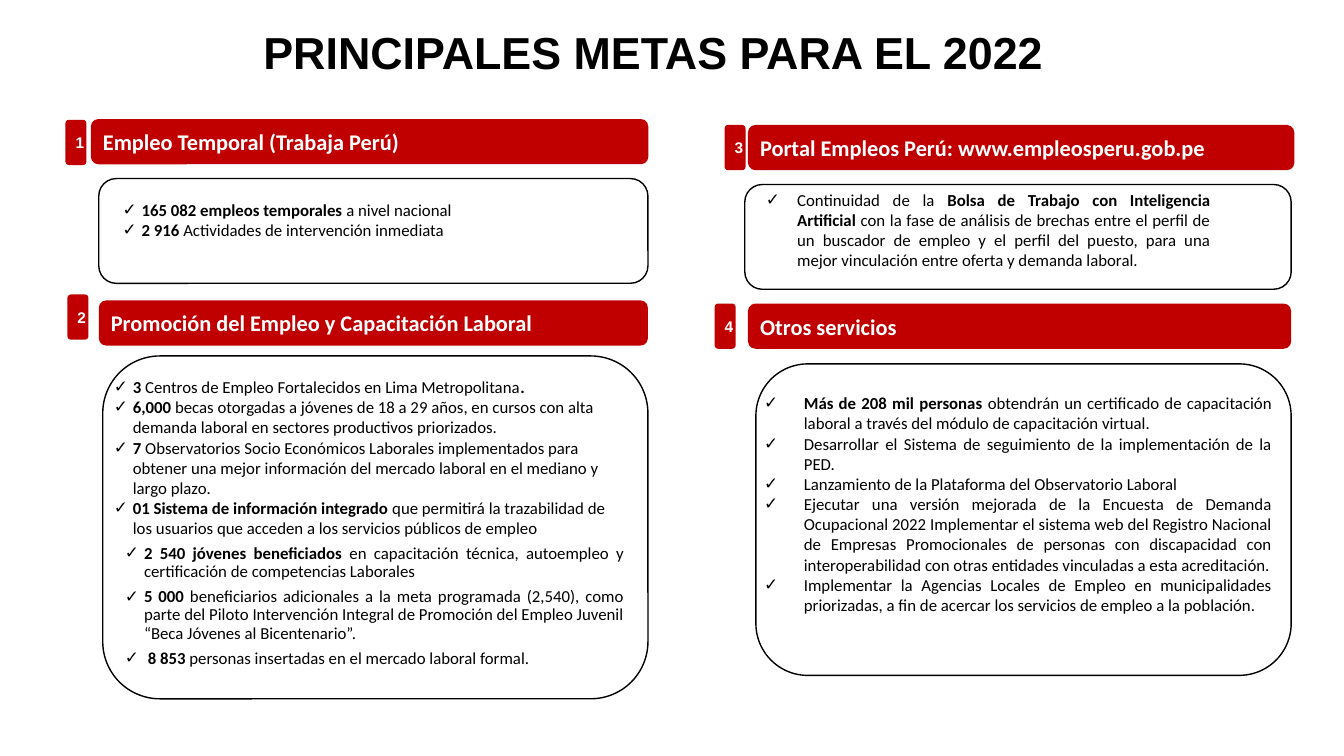
"""Build the slide with the main employment goals for 2022."""
from dataclasses import dataclass

from lxml import etree
from pptx import Presentation
from pptx import util as u
from pptx.dml.color import RGBColor
from pptx.enum import shapes, text
from pptx.oxml.ns import qn

TITLE = "PRINCIPALES METAS PARA EL 2022 "
TITLE_BOX = (0.38, 0.51, 32.49, 1.63)
BADGE = (0.53, 1.14)

# Asterisks enclose the bold words of each item.
GOALS = [
    dict(
        head="Empleo Temporal (Trabaja Perú)",
        badge=(1.65, 3.02), bar=(2.29, 3, 14.05, 1.14),
        panel=(2.49, 4.5, 13.84, 2.64), body=(1.85, 4.9, 14.35, 1.27),
        style="main", just=True,
        items=[
            "*165 082 empleos temporales *a nivel nacional",
            "*2 916 *Actividades de intervención inmediata",
        ],
    ),
    dict(
        head="Promoción del Empleo y Capacitación Laboral",
        badge=(1.7, 7.42), bar=(2.49, 7.57, 13.84, 1.14),
        panel=(2.59, 8.97, 13.74, 8.64), body=(1.63, 9.37, 14.35, 8.18),
        style="main", just=False,
        items=[
            "*3 *Centros de Empleo Fortalecidos en Lima Metropolitana*.*",
            "*6,000 *becas otorgadas a jóvenes de 18 a 29 años, en cursos con alta demanda laboral en sectores productivos priorizados.",
            "*7 *Observatorios Socio Económicos Laborales implementados para obtener una mejor información del mercado laboral en el mediano y largo plazo.",
            "*01 Sistema de información integrado *que permitirá la trazabilidad de los usuarios que acceden a los servicios públicos de empleo",
        ],
        subs=[
            "*2 540 jóvenes beneficiados *en capacitación técnica, autoempleo y certificación de competencias Laborales",
            "*5 000* beneficiarios adicionales a la meta programada (2,540), como parte del Piloto Intervención Integral de Promoción del Empleo Juvenil “Beca Jóvenes al Bicentenario”.",
            "* 8 853 *personas insertadas en el mercado laboral formal.",
        ],
    ),
    dict(
        head="Portal Empleos Perú: www.empleosperu.gob.pe",
        badge=(18.26, 3.15), bar=(18.85, 3.15, 13.77, 1.14),
        panel=(18.77, 4.65, 13.77, 2.64), body=(19.05, 4.65, 11.71, 2.82),
        style="flush", just=True,
        items=[
            "Continuidad de la *Bolsa de Trabajo con Inteligencia Artificial *con la fase de análisis de brechas entre el perfil de un buscador de empleo y el perfil del puesto, para una mejor vinculación entre oferta y demanda laboral.",
        ],
    ),
    dict(
        head="Otros servicios",
        badge=(18.01, 7.65), bar=(18.85, 7.65, 13.69, 1.14),
        panel=(19.05, 9.17, 13.49, 7.85), body=(18.01, 9.78, 14.3, 7.44),
        style="wide", just=True,
        items=[
            "*Más de 208 mil personas *obtendrán un certificado de capacitación laboral a través del módulo de capacitación virtual.",
            "Desarrollar el Sistema de seguimiento de la implementación de la PED.",
            "Lanzamiento de la Plataforma del Observatorio Laboral",
            "Ejecutar una versión mejorada de la Encuesta de Demanda Ocupacional 2022 Implementar el sistema web del Registro Nacional de Empresas Promocionales de personas con discapacidad con interoperabilidad con otras entidades vinculadas a esta acreditación.",
            "Implementar la Agencias Locales de Empleo en municipalidades priorizadas, a fin de acercar los servicios de empleo a la población.",
        ],
    ),
]
INDENTS = {"main": (1.47, 0.48), "sub": (1.75, 0.48), "flush": (0.79, 0.79), "wide": (2, 1)}


@dataclass(frozen=True)
class Theme:
    red: RGBColor = RGBColor(0xC0, 0, 0)
    ink: RGBColor = RGBColor(0, 0, 0)
    white: RGBColor = RGBColor(255, 255, 255)
    sans: str = "Arial"
    text: str = "Calibri"
    title: int = 32
    head: int = 16
    body: int = 12
    num: int = 11


LOOK = Theme()
ALIGN = text.PP_ALIGN


def cm(vals):
    return [u.Cm(v) for v in vals]


def style(para, name, size, color, bold=None):
    font = para.font
    font.name, font.size, font.bold = name, u.Pt(size), bold
    font.color.rgb = color


def write(frame, words, align, *look):
    para = frame.paragraphs[0]
    para.add_run().text = words
    para.alignment = align
    style(para, *look, True)


def box(slide, area):
    frame = slide.shapes.add_textbox(*cm(area)).text_frame
    frame.word_wrap = True
    return frame


def card(slide, area, fill=None):
    shape = slide.shapes.add_shape(shapes.MSO_SHAPE.ROUNDED_RECTANGLE, *cm(area))
    shape.shadow.inherit = False
    if fill is None:
        shape.fill.background()
        shape.line.color.rgb = LOOK.ink
        shape.line.width = u.Pt(1)
    else:
        shape.fill.solid()
        shape.fill.fore_color.rgb = fill
        shape.line.fill.background()
    shape.text_frame.vertical_anchor = text.MSO_ANCHOR.MIDDLE
    return shape.text_frame


def bullet(para, words, kind, just):
    left, hang = cm(INDENTS[kind])
    props = para._p.get_or_add_pPr()
    props.set("marL", str(left))
    props.set("indent", str(-hang))
    etree.SubElement(props, qn("a:buFont")).set("typeface", LOOK.sans)
    etree.SubElement(props, qn("a:buChar")).set("char", "✓")
    para.alignment = ALIGN.JUSTIFY if just else ALIGN.LEFT
    if kind == "sub":
        para.level = 1
        para.line_spacing = 0.9
        para.space_before = u.Pt(5)
    style(para, LOOK.text, LOOK.body, LOOK.ink)
    for pos, part in enumerate(words.split("*")):
        if part:
            run = para.add_run()
            run.text = part
            if pos % 2:
                run.font.bold = True


def goal(slide, num, data):
    write(card(slide, data["bar"], LOOK.red), data["head"], ALIGN.LEFT,
          LOOK.text, LOOK.head, LOOK.white)
    write(card(slide, data["badge"] + BADGE, LOOK.red), str(num), ALIGN.CENTER,
          LOOK.sans, LOOK.num, LOOK.white)
    card(slide, data["panel"])
    frame = box(slide, data["body"])
    rows = [(item, data["style"], data["just"]) for item in data["items"]]
    rows += [(item, "sub", True) for item in data.get("subs", [])]
    for pos, row in enumerate(rows):
        bullet(frame.add_paragraph() if pos else frame.paragraphs[0], *row)


def main():
    deck = Presentation()
    deck.slide_width, deck.slide_height = cm((33.87, 19.05))
    slide = deck.slides.add_slide(deck.slide_layouts[6])
    write(box(slide, TITLE_BOX), TITLE, ALIGN.CENTER, LOOK.sans, LOOK.title, LOOK.ink)
    for num, data in enumerate(GOALS, 1):
        goal(slide, num, data)
    deck.save("out.pptx")


if __name__ == "__main__":
    main()
